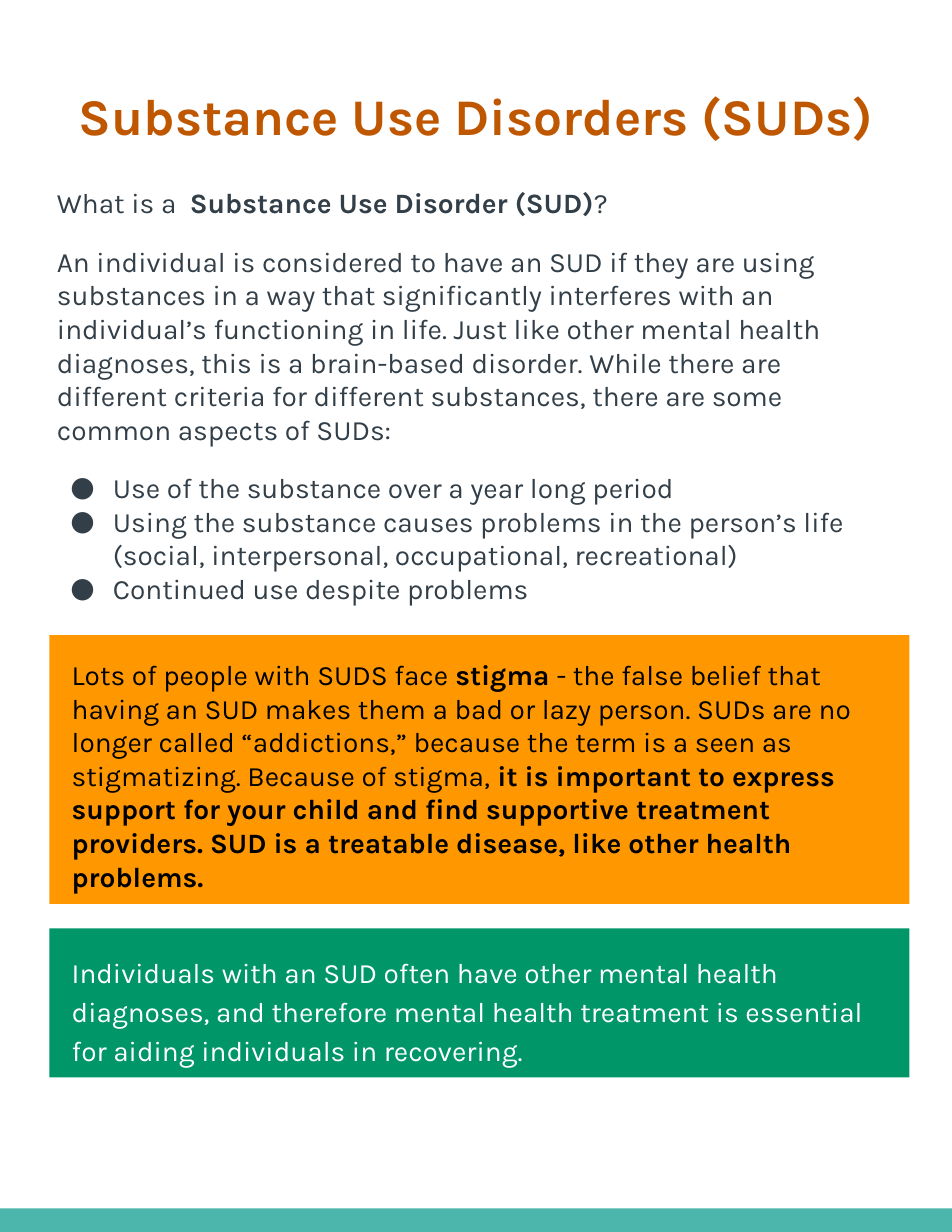
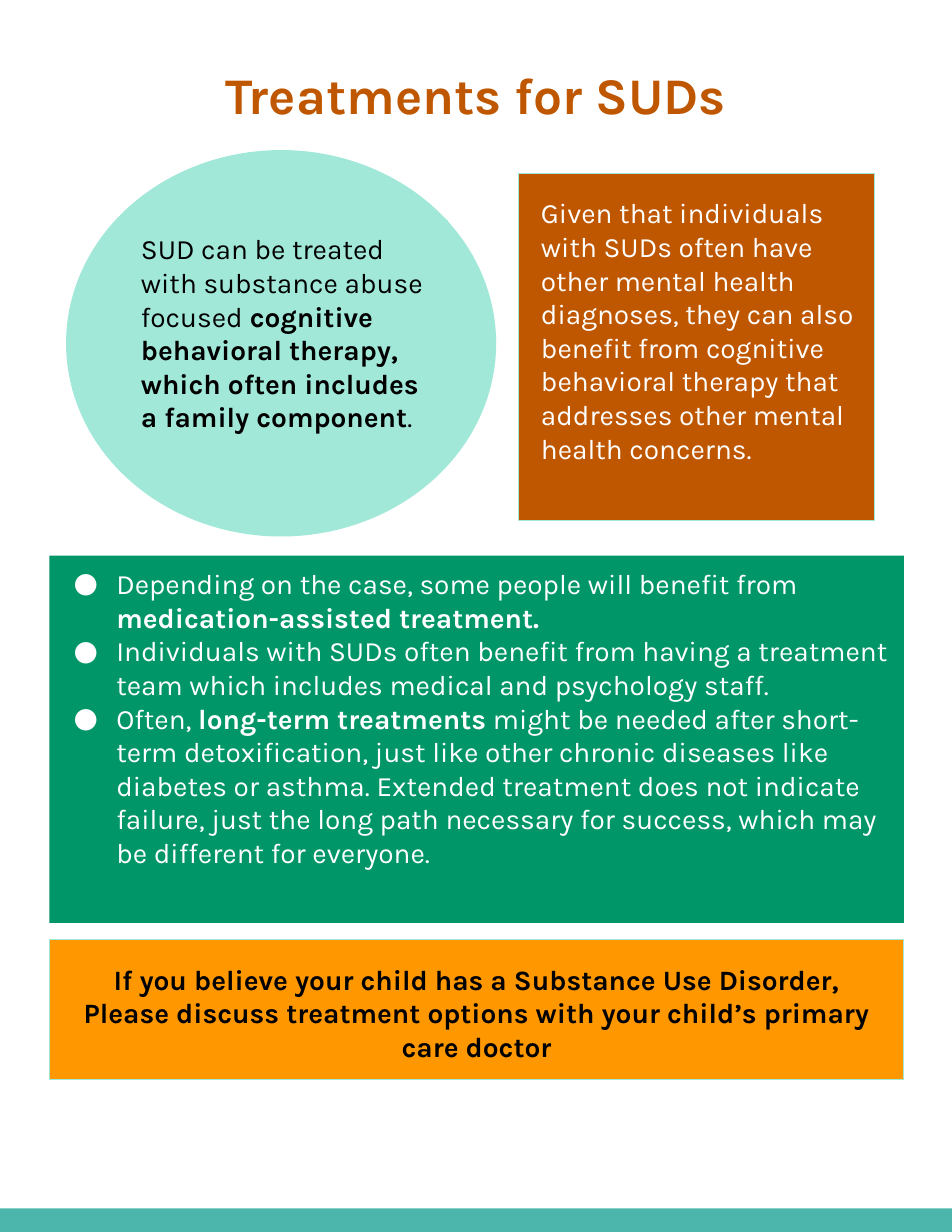
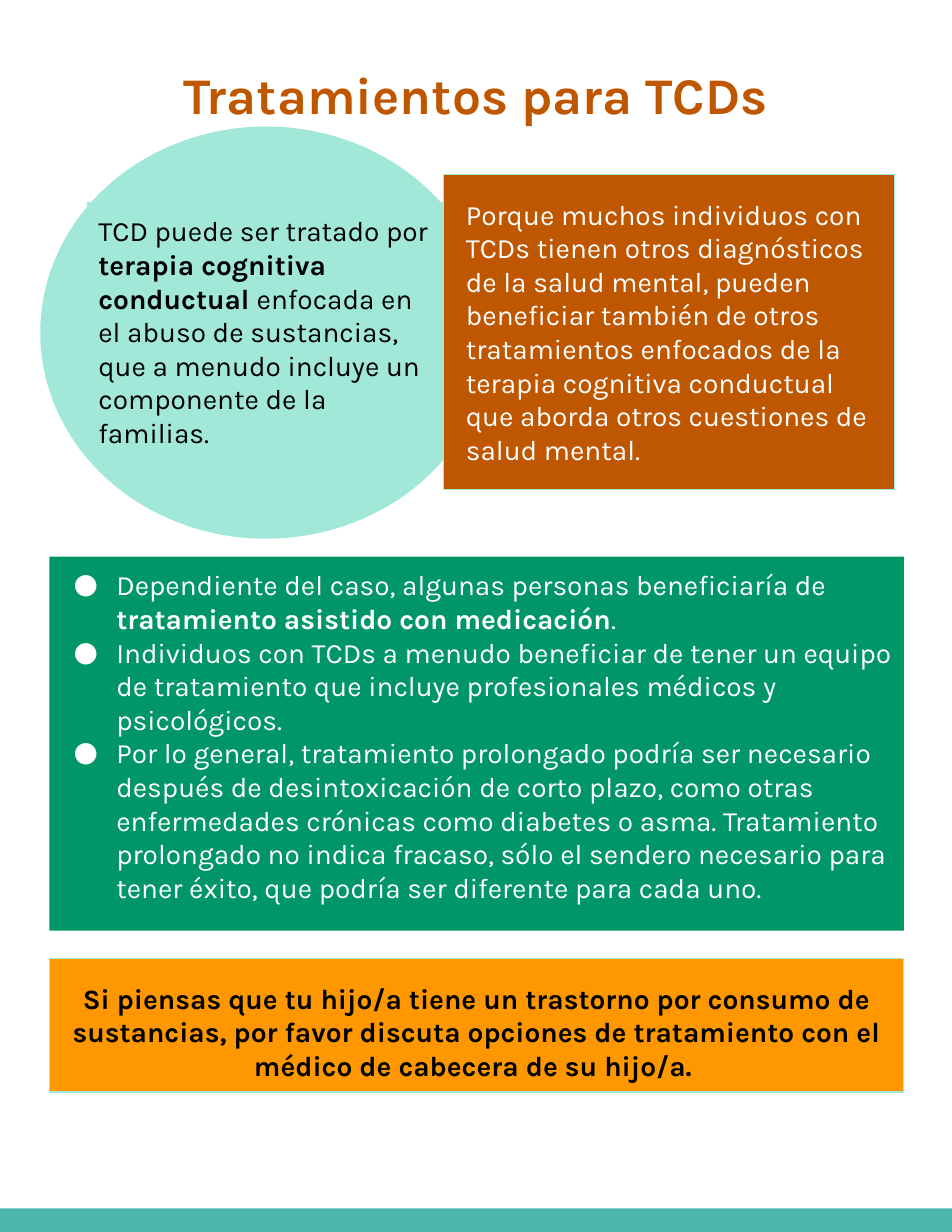
from dataclasses import dataclass

from lxml import etree
from pptx import Presentation
from pptx.dml.color import RGBColor
from pptx.enum.shapes import MSO_SHAPE
from pptx.enum.text import MSO_ANCHOR, PP_ALIGN
from pptx.oxml.ns import qn
from pptx.slide import Slide
from pptx.text.text import TextFrame
from pptx.util import Inches, Pt

RECT, OVAL = MSO_SHAPE.RECTANGLE, MSO_SHAPE.OVAL
TOP, MIDDLE = MSO_ANCHOR.TOP, MSO_ANCHOR.MIDDLE
LEFT, CENTER = PP_ALIGN.LEFT, PP_ALIGN.CENTER


@dataclass(frozen=True)
class Theme:
    font: str = "Karla"
    head: int = 33
    body: int = 18
    gap: int = 16
    edge: float = 0.75
    rust: str = "BF5700"
    slate: str = "333F48"
    amber: str = "FF9800"
    green: str = "009668"
    mint: str = "A1E8D9"
    teal: str = "4DB6AC"
    black: str = "000000"
    white: str = "FFFFFF"


THEME = Theme()


@dataclass(frozen=True)
class Area:
    left: float
    top: float
    width: float
    height: float

    def lengths(self) -> list[int]:
        return [Inches(v) for v in (self.left, self.top, self.width, self.height)]


@dataclass(frozen=True)
class Para:
    text: str
    bullet: bool = False
    before: int = 0
    after: int = 0
    lead: float = 1.0


@dataclass(frozen=True)
class Style:
    color: str
    fill: str | None = None
    line: str | None = None
    pads: tuple[float, float, float, float] = (0.1, 0.1, 0.1, 0.1)
    size: int = THEME.body
    align: PP_ALIGN = LEFT
    anchor: MSO_ANCHOR = TOP


@dataclass(frozen=True)
class Panel:
    area: Area
    style: Style
    paras: tuple[Para, ...] = ()
    form: MSO_SHAPE = RECT


@dataclass(frozen=True)
class Page:
    title: str
    top: float
    panels: tuple[Panel, ...]


HEAD = Style(THEME.rust, size=THEME.head, align=CENTER, anchor=MIDDLE)
INTRO = Style(THEME.slate)
STIGMA = Style(THEME.black, THEME.amber, pads=(0.2, 0.2, 0.2, 0.2))
NOTE = Style(THEME.white, THEME.green, pads=(0.2, 0.2, 0.1, 0.2))
LIST = Style(THEME.white, THEME.green)
DISC = Style(THEME.black, THEME.mint)
CORE = Style(THEME.black, THEME.mint, THEME.mint)
CARD = Style(THEME.white, THEME.rust, THEME.mint, (0.2, 0.2, 0.1, 0.1))
CALL = Style(THEME.black, THEME.amber, THEME.mint, (0.2, 0.2, 0.2, 0.1), align=CENTER)
BAND = Panel(Area(0, 10.79, 8.5, 0.21), Style(THEME.white, THEME.teal))


def bullets(*texts: str, before: int = 0) -> tuple[Para, ...]:
    return tuple(Para(t, True, 0 if i else before) for i, t in enumerate(texts))


PAGES = (
    Page("Substance Use Disorders (SUDs)", 0.63, (
        Panel(Area(0.41, 1.56, 7.68, 4.03), INTRO, (
            Para("What is a  **Substance Use Disorder (SUD)**?"),
            Para("An individual is considered to have an SUD if they are using substances "
                 "in a way that significantly interferes with an individual’s functioning "
                 "in life. Just like other mental health diagnoses, this is a brain-based "
                 "disorder. While there are different criteria for different substances, "
                 "there are some common aspects of SUDs:", before=THEME.gap),
            *bullets(
                "Use of the substance over a year long period",
                "Using the substance causes problems in the person’s life (social, "
                "interpersonal, occupational, recreational)",
                "Continued use despite problems",
                before=THEME.gap),
        )),
        Panel(Area(0.44, 5.67, 7.68, 2.4), STIGMA, (
            Para("Lots of people with SUDS face **stigma **- the false belief that having "
                 "an SUD makes them a bad or lazy person. SUDs are no longer called "
                 "“addictions,” because the term is a seen as stigmatizing. Because of "
                 "stigma,** it is important to express support for your child and find "
                 "supportive treatment providers. SUD is a treatable disease, like other "
                 "health problems.**", after=THEME.gap),
        )),
        Panel(Area(0.44, 8.29, 7.68, 1.33), NOTE, (
            Para("Individuals with an SUD often have other mental health diagnoses, and "
                 "therefore mental health treatment is essential for aiding individuals "
                 "in recovering.", after=THEME.gap, lead=1.15),
        )),
    )),
    Page("Treatments for SUDs", 0.44, (
        Panel(Area(0.44, 8.39, 7.63, 1.25), CALL, (
            Para("**If you believe your child has a Substance Use Disorder, Please discuss "
                 "treatment options with your child’s primary care doctor**"),
        )),
        Panel(Area(0.59, 1.34, 3.84, 3.45), DISC, form=OVAL),
        Panel(Area(1.16, 1.97, 2.84, 2.11), CORE, (
            Para("SUD can be treated with substance abuse focused** cognitive behavioral "
                 "therapy, which often includes a family component**."),
        )),
        Panel(Area(4.63, 1.55, 3.18, 3.1), CARD, (
            Para("Given that individuals with SUDs often have other mental health "
                 "diagnoses, they can also benefit from cognitive behavioral therapy that "
                 "addresses other mental health concerns."),
        )),
        Panel(Area(0.44, 4.96, 7.63, 3.28), LIST, bullets(
            "Depending on the case, some people will benefit from "
            "**medication-assisted treatment.**",
            "Individuals with SUDs often benefit from having a treatment team which "
            "includes medical and psychology staff.",
            "Often, **long-term treatments** might be needed after short-term "
            "detoxification, just like other chronic diseases like diabetes or asthma. "
            "Extended treatment does not indicate failure, just the long path necessary "
            "for success, which may be different for everyone.",
        )),
    )),
    Page("Tratamientos para TCDs", 0.44, (
        Panel(Area(0.44, 8.56, 7.63, 1.19), CALL, (
            Para("**Si piensas que tu hijo/a tiene un trastorno por consumo de sustancias, "
                 "por favor discuta opciones de tratamiento con el médico de cabecera de "
                 "su hijo/a. **"),
        )),
        Panel(Area(0.44, 4.97, 7.63, 3.34), LIST, bullets(
            "Dependiente del caso, algunas personas beneficiaría de "
            "**tratamiento asistido con medicación**.",
            "Individuos con TCDs a menudo beneficiar de tener un equipo de tratamiento "
            "que incluye profesionales médicos y psicológicos.",
            "Por lo general, tratamiento prolongado podría ser necesario después de "
            "desintoxicación de corto plazo, como otras enfermedades crónicas como "
            "diabetes o asma. Tratamiento prolongado no indica fracaso, sólo el sendero "
            "necesario para tener éxito, que podría ser diferente para cada uno.",
        )),
        Panel(Area(0.36, 1.13, 4.03, 3.68), DISC, form=OVAL),
        Panel(Area(0.78, 1.81, 3.18, 2.11), CORE, (
            Para("TCD puede ser tratado por **terapia cognitiva conductual **enfocada en "
                 "el abuso de sustancias, que a menudo incluye un componente de la "
                 "familias."),
        )),
        Panel(Area(3.96, 1.56, 4.03, 2.81), CARD, (
            Para("Porque muchos individuos con TCDs tienen otros diagnósticos de la salud "
                 "mental, pueden beneficiar también de otros tratamientos enfocados de la "
                 "terapia cognitiva conductual que aborda otros cuestiones de salud "
                 "mental."),
        )),
    )),
)


def assign(target: object, values: dict[str, object]) -> None:
    for name, value in values.items():
        setattr(target, name, value)


def add_bullet(props: etree._Element, color: str) -> None:
    props.set("marL", str(Inches(0.5)))
    props.set("indent", str(Inches(-0.38)))
    tint = etree.SubElement(props, qn("a:buClr"))
    etree.SubElement(tint, qn("a:srgbClr"), val=color)
    etree.SubElement(props, qn("a:buFont"), typeface=THEME.font)
    etree.SubElement(props, qn("a:buChar"), char="●")


def write(frame: TextFrame, paras: tuple[Para, ...], style: Style) -> None:
    sides = ("left", "top", "right", "bottom")
    pads = {f"margin_{s}": Inches(p) for s, p in zip(sides, style.pads)}
    assign(frame, {"word_wrap": True, "vertical_anchor": style.anchor, **pads})
    for i, para in enumerate(paras):
        block = frame.add_paragraph() if i else frame.paragraphs[0]
        assign(block, {
            "alignment": style.align,
            "space_before": Pt(para.before),
            "space_after": Pt(para.after),
            "line_spacing": para.lead,
        })
        if para.bullet:
            add_bullet(block._p.get_or_add_pPr(), style.color)
        for j, part in enumerate(para.text.split("**")):
            if part:
                run = block.add_run()
                run.text = part
                assign(run.font, {"name": THEME.font, "size": Pt(style.size),
                                  "bold": j % 2 == 1})
                run.font.color.rgb = RGBColor.from_string(style.color)


def draw(slide: Slide, panel: Panel) -> None:
    style, box = panel.style, panel.area.lengths()
    if style.fill is None:
        shape = slide.shapes.add_textbox(*box)
    else:
        shape = slide.shapes.add_shape(panel.form, *box)
        shape.shadow.inherit = False
        shape.fill.solid()
        shape.fill.fore_color.rgb = RGBColor.from_string(style.fill)
        if style.line:
            shape.line.color.rgb = RGBColor.from_string(style.line)
            shape.line.width = Pt(THEME.edge)
        else:
            shape.line.fill.background()
    if panel.paras:
        write(shape.text_frame, panel.paras, style)


def main() -> None:
    deck = Presentation()
    assign(deck, {"slide_width": Inches(8.5), "slide_height": Inches(11)})
    for page in PAGES:
        slide = deck.slides.add_slide(deck.slide_layouts[6])
        title = Panel(Area(0.29, page.top, 7.92, 0.8), HEAD, (Para(f"**{page.title}**"),))
        for panel in (BAND, title, *page.panels):
            draw(slide, panel)
    deck.save("out.pptx")


if __name__ == "__main__":
    main()
